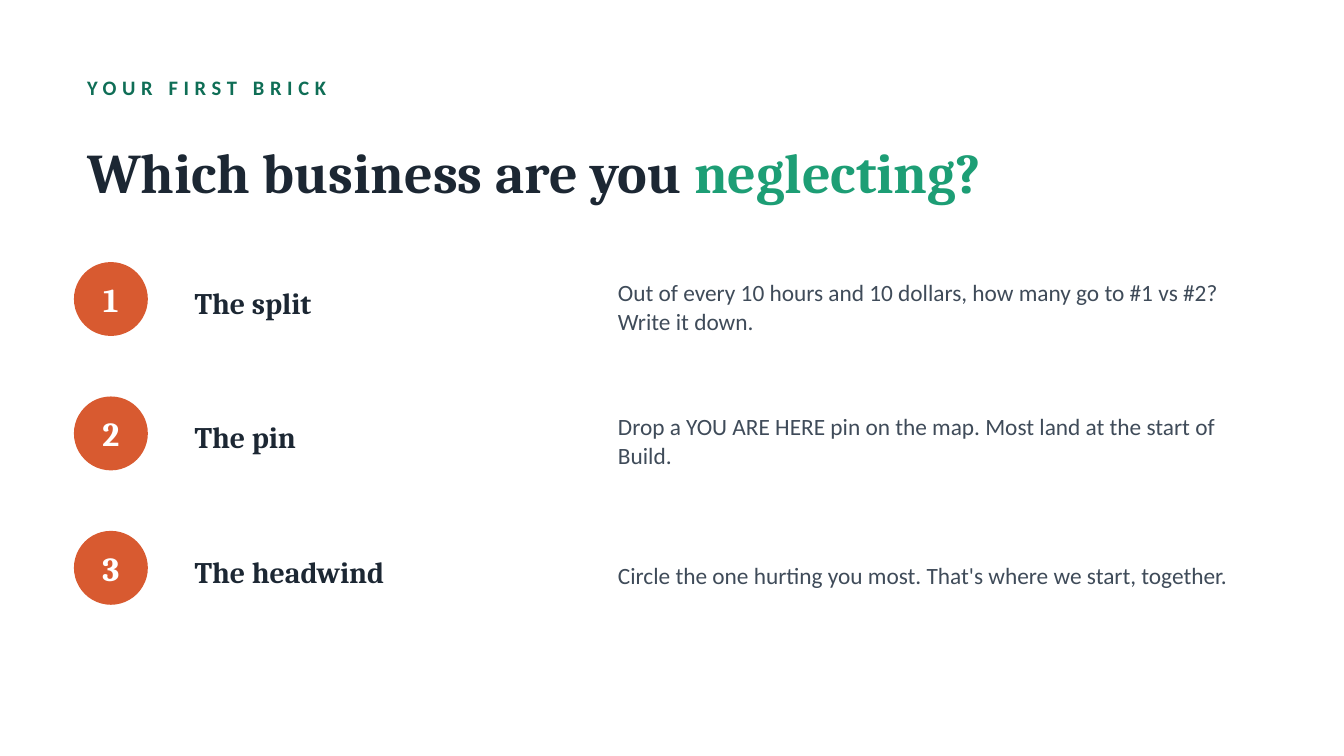
import pptx
import pptx.util
import pptx.dml.color
import pptx.enum.shapes
import pptx.enum.text

Inches = pptx.util.Inches


class Theme:
    white = "FFFFFF"
    ink = "1C2733"
    slate = "3F4B59"
    pine = "0F6E56"
    green = "1D9E75"
    orange = "D85A30"
    serif = "Cambria"
    sans = "Calibri"
    label = 11
    title = 30
    number = 18
    head = 16
    body = 12.5


def add_box(left, top, width, height):
    box = slide.shapes.add_textbox(Inches(left), Inches(top), Inches(width), Inches(height))
    frame = box.text_frame
    frame.word_wrap = True
    frame.vertical_anchor = pptx.enum.text.MSO_ANCHOR.MIDDLE
    return frame.paragraphs[0]


def add_run(para, text, face, size, color, bold=True):
    run = para.add_run()
    run.text = text
    run.font.name = face
    run.font.size = pptx.util.Pt(size)
    run.font.bold = bold
    run.font.color.rgb = pptx.dml.color.RGBColor.from_string(color)
    return run


deck = pptx.Presentation()
deck.slide_width = Inches(10)
deck.slide_height = Inches(10) * 9 // 16
slide = deck.slides.add_slide(deck.slide_layouts[6])
slide.background.fill.solid()
slide.background.fill.fore_color.rgb = pptx.dml.color.RGBColor.from_string(Theme.white)

label = add_run(add_box(0.55, 0.5, 8.9, 0.3), "YOUR FIRST BRICK", Theme.sans, Theme.label, Theme.pine)
label._r.get_or_add_rPr().set("spc", "300")

title = add_box(0.55, 0.85, 8.9, 0.85)
add_run(title, "Which business are you ", Theme.serif, Theme.title, Theme.ink)
add_run(title, "neglecting?", Theme.serif, Theme.title, Theme.green)

steps = [
    ("The split", "Out of every 10 hours and 10 dollars, how many go to #1 vs #2? Write it down."),
    ("The pin", "Drop a YOU ARE HERE pin on the map. Most land at the start of Build."),
    ("The headwind", "Circle the one hurting you most. That's where we start, together."),
]
for index, (head, body) in enumerate(steps):
    top = 1.9 + index
    spot = (0.55, top + 0.05, 0.55, 0.55)

    disc = slide.shapes.add_shape(pptx.enum.shapes.MSO_SHAPE.OVAL, *map(Inches, spot))
    disc.shadow.inherit = False
    disc.fill.solid()
    disc.fill.fore_color.rgb = pptx.dml.color.RGBColor.from_string(Theme.orange)
    disc.line.fill.background()

    number = add_box(*spot)
    number.alignment = pptx.enum.text.PP_ALIGN.CENTER
    add_run(number, str(index + 1), Theme.serif, Theme.number, Theme.white)

    add_run(add_box(1.35, top, 3, 0.7), head, Theme.serif, Theme.head, Theme.ink)

    detail = add_box(4.5, top, 5, 0.75)
    detail.line_spacing = 1.05
    add_run(detail, body, Theme.sans, Theme.body, Theme.slate, bold=False)

deck.save("out.pptx")
